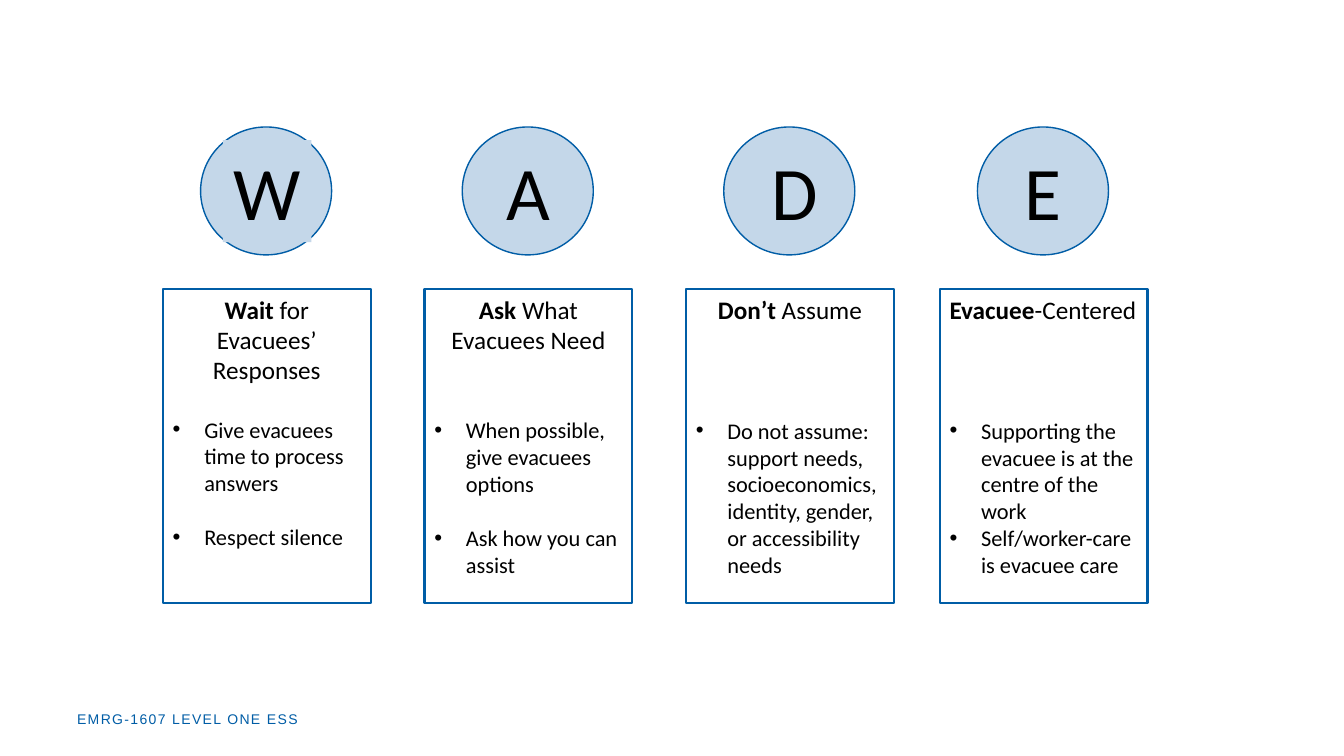
"""Builds the WADE slide: four lettered circles above four bulleted boxes."""
from lxml import etree
from pptx import Presentation
from pptx.dml.color import RGBColor
from pptx.enum.shapes import MSO_SHAPE
from pptx.enum.text import MSO_ANCHOR, PP_ALIGN
from pptx.oxml.ns import qn
from pptx.util import Pt

OVAL, RECT = MSO_SHAPE.OVAL, MSO_SHAPE.RECTANGLE
TOP = MSO_ANCHOR.TOP
LEFT, CENTER = PP_ALIGN.LEFT, PP_ALIGN.CENTER
BLUE, PALE, WHITE, BLACK = "005DA6", "C4D7E9", "FFFFFF", "000000"
HEAD_LINE, BULLET_LINE, INDENT = 22, 19.5, 22.5

COLUMNS = [
    ("W", 143.3, 159.1, 63.4, CENTER, "Wait ", "for Evacuees’ Responses", 1, BULLET_LINE,
     ["Give evacuees time to process answers", "Respect silence"]),
    ("A", 330.2, 354.2, 46.1, CENTER, "Ask ", "What Evacuees Need", 2, BULLET_LINE,
     ["When possible, give evacuees options", "Ask how you can assist"]),
    ("D", 517, 543.6, 48.2, CENTER, "Don’t", " Assume", 3, 0,
     ["Do not assume: support needs, socioeconomics, identity, gender, or accessibility needs"]),
    ("E", 698.2, 724.3, 41, LEFT, "Evacuee", "-Centered", 3, 0,
     ["Supporting the evacuee is at the centre of the work", "Self/worker-care is evacuee care"]),
]

prs = Presentation()
prs.slide_width, prs.slide_height = Pt(960), Pt(540)
s = prs.slides.add_slide(prs.slide_layouts[6])


def add_shape(kind, x, y, w, h, fill, line_width=0):
    sp = s.shapes.add_shape(kind, Pt(x), Pt(y), Pt(w), Pt(h))
    sp.shadow.inherit = False
    sp.fill.solid()
    sp.fill.fore_color.rgb = RGBColor.from_string(fill)
    if line_width:
        sp.line.color.rgb = RGBColor.from_string(BLUE)
        sp.line.width = Pt(line_width)
    else:
        sp.line.fill.background()
    sp.text_frame.vertical_anchor = TOP
    return sp


def add_run(p, text, size, color=BLACK, bold=False, font="Calibri"):
    r = p.add_run()
    r.text = text
    r.font.size, r.font.name, r.font.bold = Pt(size), font, bold
    r.font.color.rgb = RGBColor.from_string(color)
    return r


footer = s.shapes.add_textbox(Pt(48), Pt(504), Pt(432), Pt(19.4))
footer.text_frame.word_wrap = True
r = add_run(footer.text_frame.paragraphs[0], "EMRG-1607 LEVEL ONE ESS", 10, BLUE, font="Arial")
r.font._element.set("spc", "100")

for letter, x, letter_x, letter_w, align, strong, rest, head_gap, bullet_gap, bullets in COLUMNS:
    add_shape(OVAL, x, 90.7, 93.6, 91.4, PALE, 1)

    tf = add_shape(RECT, letter_x, 100.1, letter_w, 72.9, PALE).text_frame
    tf.word_wrap = False
    p = tf.paragraphs[0]
    p.alignment = CENTER
    add_run(p, letter, 54)

    tf = add_shape(RECT, x - 27, 206.6, 148.5, 224, WHITE, 1.5).text_frame
    tf.word_wrap = True
    p = tf.paragraphs[0]
    p.alignment = align
    add_run(p, strong, 18, bold=True)
    add_run(p, rest, 18)
    for i, bullet in enumerate(bullets):
        p = tf.add_paragraph()
        p.alignment = LEFT
        p.space_before = Pt(bullet_gap if i else head_gap * HEAD_LINE)
        add_run(p, bullet, 16)
        pPr = p._p.get_or_add_pPr()
        pPr.set("marL", str(Pt(INDENT)))
        pPr.set("indent", str(-Pt(INDENT)))
        etree.SubElement(pPr, qn("a:buFont")).set("typeface", "Arial")
        etree.SubElement(pPr, qn("a:buChar")).set("char", "•")

prs.save("out.pptx")
